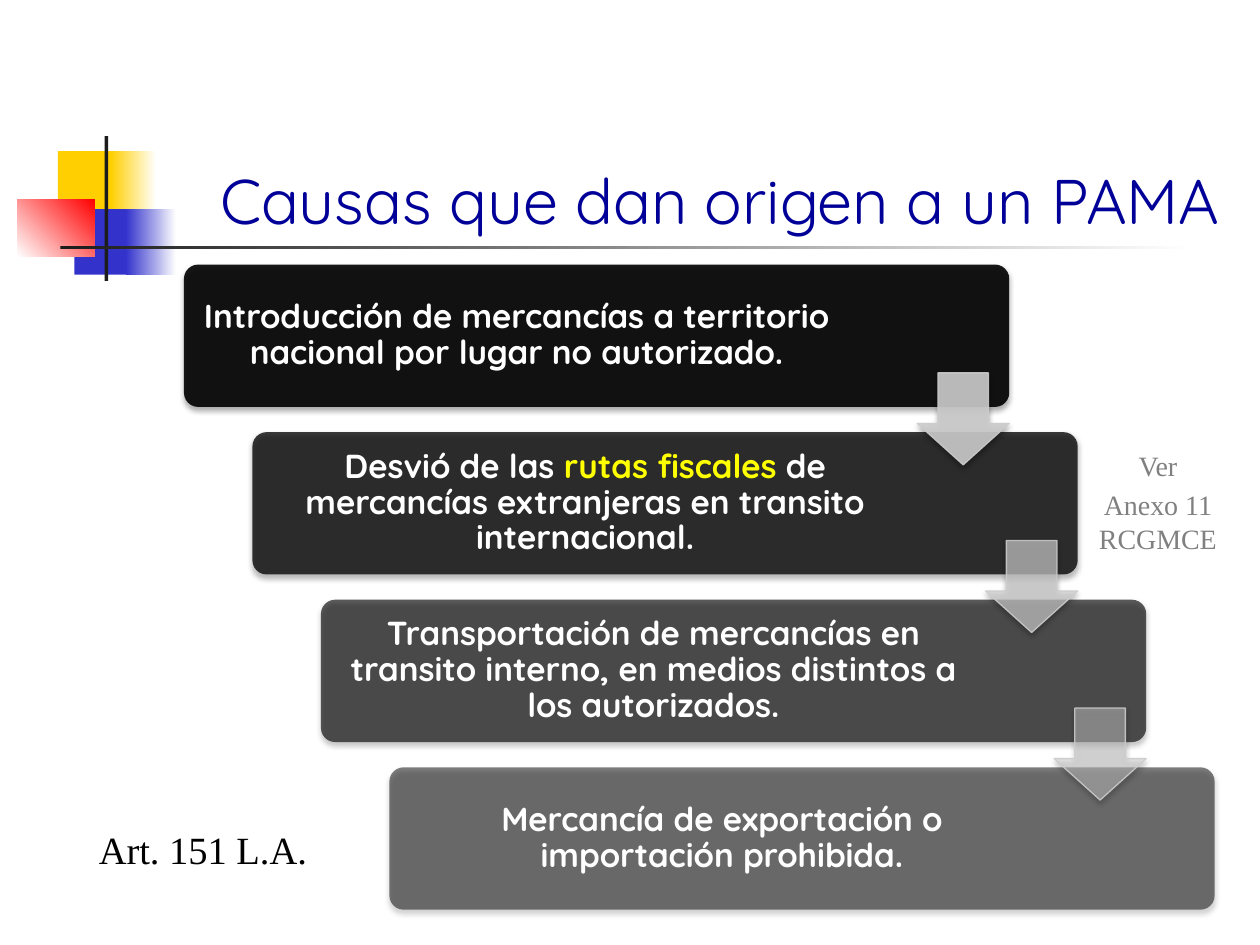
import lxml.etree
import pptx
import pptx.dml.color
import pptx.enum.shapes
import pptx.enum.text
import pptx.oxml.ns
import pptx.util

Inches = pptx.util.Inches
Pt = pptx.util.Pt
SHAPE = pptx.enum.shapes.MSO_SHAPE
ALIGN = pptx.enum.text.PP_ALIGN
ANCHOR = pptx.enum.text.MSO_ANCHOR
qn = pptx.oxml.ns.qn

CARDS = [
    [("Introducción de mercancías a territorio nacional por lugar no autorizado.", "FFFFFF")],
    [("Desvió de las ", "FFFFFF"), ("rutas fiscales ", "FFFF00"),
     ("de mercancías extranjeras en transito internacional.", "FFFFFF")],
    [("Transportación de mercancías en transito interno, en medios distintos a los autorizados.", "FFFFFF")],
    [("Mercancía de exportación o importación prohibida.", "FFFFFF")],
]
CARD_OPACITY = [90, 77, 63, 50]
ARROW_OPACITY = [90, 70, 50]


def rgb(value):
    """Turn a hex string into a colour."""
    return pptx.dml.color.RGBColor.from_string(value)


def set_opacity(fill_element, percent):
    """Make the solid colour inside an element partly transparent."""
    color = fill_element.find(".//" + qn("a:srgbClr"))
    lxml.etree.SubElement(color, qn("a:alpha"), val=str(percent * 1000))


def add_shadow(shape):
    """Give a shape a soft shadow that falls straight down."""
    effects = shape._element.spPr.find(qn("a:effectLst"))
    shadow = lxml.etree.SubElement(effects, qn("a:outerShdw"), blurRad=str(Pt(3.1)),
                                   dist=str(Pt(1.8)), dir="5400000", rotWithShape="0")
    color = lxml.etree.SubElement(shadow, qn("a:srgbClr"), val="000000")
    lxml.etree.SubElement(color, qn("a:alpha"), val="35000")


def add_shape(page, kind, box, color, end_color=None, angle=0, opacity=None, adjustments=()):
    """Add a borderless preset shape with a solid or two-colour fill."""
    shape = page.shapes.add_shape(kind, *map(Inches, box))
    shape.shadow.inherit = False
    shape.line.fill.background()
    for index, value in enumerate(adjustments):
        shape.adjustments[index] = value
    if end_color:
        shape.fill.gradient()
        shape.fill.gradient_angle = angle
        for stop, position, value in zip(shape.fill.gradient_stops, (0, 1), (color, end_color)):
            stop.position = position
            stop.color.rgb = rgb(value)
    else:
        shape.fill.solid()
        shape.fill.fore_color.rgb = rgb(color)
    if opacity:
        set_opacity(shape._element.spPr.find(qn("a:solidFill")), opacity)
        add_shadow(shape)
    return shape


def add_text(page, box, paragraphs, size, font, align=ALIGN.CENTER, anchor=ANCHOR.TOP,
             bold=False, inset=None, before=0, after=0, line_spacing=None):
    """Add a text box whose paragraphs are lists of (text, colour) spans."""
    frame = page.shapes.add_textbox(*map(Inches, box)).text_frame
    frame.word_wrap = True
    frame.vertical_anchor = anchor
    if inset is not None:
        frame.margin_left = frame.margin_right = Inches(inset)
        frame.margin_top = frame.margin_bottom = Inches(inset)
    for index, spans in enumerate(paragraphs):
        para = frame.add_paragraph() if index else frame.paragraphs[0]
        para.alignment = align
        para.space_before = Pt(before)
        para.space_after = Pt(after)
        para.line_spacing = line_spacing
        for text, color in spans:
            span = para.add_run()
            span.text = text
            span.font.size = Pt(size)
            span.font.name = font
            span.font.bold = bold
            span.font.color.rgb = rgb(color)


def add_ornament(page, left, top):
    """Place the coloured squares and the two crossing bars."""
    parts = [
        (0.32, 0.12, 0.48, 0.52, "FFCF01", None, 0),
        (0.74, 0.12, 0.36, 0.52, "FFCF01", "FFFFFF", 0),
        (0.45, 0.58, 0.46, 0.52, "3333CC", None, 0),
        (0.86, 0.58, 0.4, 0.52, "3333CC", "FFFFFF", 0),
        (0, 0.5, 0.61, 0.46, "FFFFFF", "FF0000", 45),
        (0.69, 0, 0.03, 1.15, "1C1C1C", None, 0),
        (0.34, 0.87, 9, 0.03, "1C1C1C", "FFFFFF", 0),
    ]
    for x, y, width, height, color, end_color, angle in parts:
        add_shape(page, SHAPE.RECTANGLE, (left + x, top + y, width, height), color, end_color, angle)


def add_card(page, box, spans, opacity):
    """Place one rounded card and its text."""
    left, top, width, height = box
    pad = 0.03
    add_shape(page, SHAPE.ROUNDED_RECTANGLE, box, "000000", opacity=opacity, adjustments=[0.1])
    add_text(page, (left + pad, top + pad, 5.22, height - 2 * pad), [spans], 19, "Quicksand",
             anchor=ANCHOR.MIDDLE, bold=True, inset=0.08, after=6.65, line_spacing=0.9)


def add_arrow(page, box, opacity):
    """Place one down arrow with a thin outline."""
    arrow = add_shape(page, SHAPE.DOWN_ARROW, box, "CCCCCC", opacity=opacity, adjustments=[0.55, 0.45])
    arrow.line.color.rgb = rgb("CCCCCC")
    arrow.line.width = Pt(0.75)
    set_opacity(arrow._element.spPr.find(qn("a:ln")), 90)


def add_staircase(page, left, top, width, height):
    """Place the descending cards, then the arrows that link them."""
    card_width, card_height, arrow_size = 6.55, 1.13, 0.73
    steps = len(CARDS) - 1
    step_x = (width - card_width) / steps
    step_y = (height - card_height) / steps
    corners = [(left + i * step_x, top + i * step_y) for i in range(len(CARDS))]
    for (x, y), spans, opacity in zip(corners, CARDS, CARD_OPACITY):
        add_card(page, (x, y, card_width, card_height), spans, opacity)
    for (x, y), opacity in zip(corners, ARROW_OPACITY):
        add_arrow(page, (x + card_width - arrow_size, y + 0.86, arrow_size, arrow_size), opacity)


def main():
    """Build the slide and save it."""
    deck = pptx.Presentation()
    deck.slide_width, deck.slide_height = Inches(10), Inches(7.5)
    page = deck.slides.add_slide(deck.slide_layouts[6])
    add_ornament(page, 0.14, 1.08)
    add_text(page, (1.26, 0.68, 8.52, 1.25), [[("Causas que dan origen a un PAMA", "000099")]],
             36, "Quicksand", align=ALIGN.RIGHT, anchor=ANCHOR.BOTTOM)
    add_text(page, (0.67, 6.51, 1.88, 0.47), [[("Art. 151 L.A.", "000000")]],
             22, "Times New Roman", before=4.4)
    add_staircase(page, 1.46, 2.1, 8.18, 5.12)
    add_text(page, (8.6, 3.51, 1.18, 0.91), [[("Ver", "808080")], [("Anexo 11 RCGMCE", "808080")]],
             16, "Times New Roman", before=3.2)
    deck.save("out.pptx")


if __name__ == "__main__":
    main()
